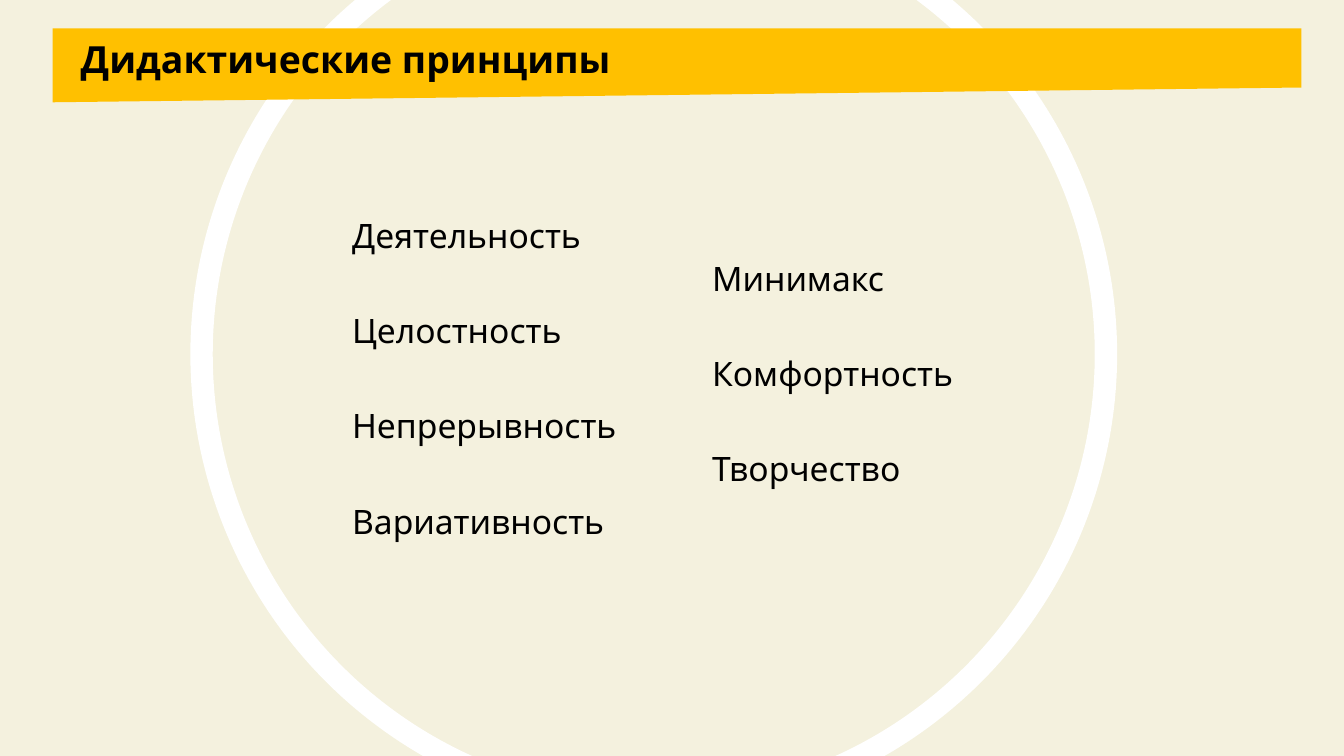
"""Build the slide that lists the didactic principles inside a ring."""
import pptx
import pptx.dml.color
import pptx.enum.shapes
import pptx.enum.text
import pptx.util
from dataclasses import dataclass

Pt = pptx.util.Pt
RGB = pptx.dml.color.RGBColor.from_string
Kind = pptx.enum.shapes.MSO_SHAPE
Fit = pptx.enum.text.MSO_AUTO_SIZE


@dataclass(frozen=True)
class Theme:
    font: str = "Karla"
    ink: str = "000000"
    sand: str = "F4F1DE"
    gold: str = "FFC000"
    white: str = "FFFFFF"
    head: int = 20
    body: int = 18


theme = Theme()


def style(frame, size, bold=False):
    para = frame.paragraphs[0]
    para.alignment = pptx.enum.text.PP_ALIGN.LEFT
    for run in para.runs:
        run.font.name = theme.font
        run.font.size = Pt(size)
        run.font.bold = bold
        run.font.color.rgb = RGB(theme.ink)


deck = pptx.Presentation()
deck.slide_width, deck.slide_height = Pt(720), Pt(405)
slide = deck.slides.add_slide(deck.slide_layouts[5])
shapes = slide.shapes
slide.background.fill.solid()
slide.background.fill.fore_color.rgb = RGB(theme.sand)

ring = shapes.add_shape(Kind.OVAL, Pt(108), Pt(-52.5), Pt(484.5), Pt(484.5))
ring.shadow.inherit = False
ring.fill.background()
ring.line.color.rgb = RGB(theme.white)
ring.line.width = Pt(12)

band = shapes.add_shape(Kind.FLOWCHART_MANUAL_INPUT, Pt(28.2), Pt(15.2), Pt(669), Pt(39.6))
band.rotation = 180
band.shadow.inherit = False
band.fill.solid()
band.fill.fore_color.rgb = RGB(theme.gold)
band.line.fill.background()

columns = [
    (181.5, 111.6, ["Деятельность", "Целостность", "Непрерывность", "Вариативность"]),
    (374.4, 134.5, ["Минимакс", "Комфортность", "Творчество"]),
]
step = 51
for left, top, words in columns:
    for row, word in enumerate(words):
        box = shapes.add_textbox(Pt(left), Pt(top + row * step), Pt(226.8), Pt(29))
        frame = box.text_frame
        frame.text = word
        frame.word_wrap = True
        frame.auto_size = Fit.SHAPE_TO_FIT_TEXT
        style(frame, theme.body)

title = shapes.title
title.left, title.top, title.width, title.height = Pt(36), Pt(16.5), Pt(384), Pt(30.2)
frame = title.text_frame
frame.text = "Дидактические принципы"
frame.word_wrap = True
frame.auto_size = Fit.NONE
frame.vertical_anchor = pptx.enum.text.MSO_ANCHOR.MIDDLE
style(frame, theme.head, bold=True)
shapes.element.append(title.element)

deck.save("out.pptx")
